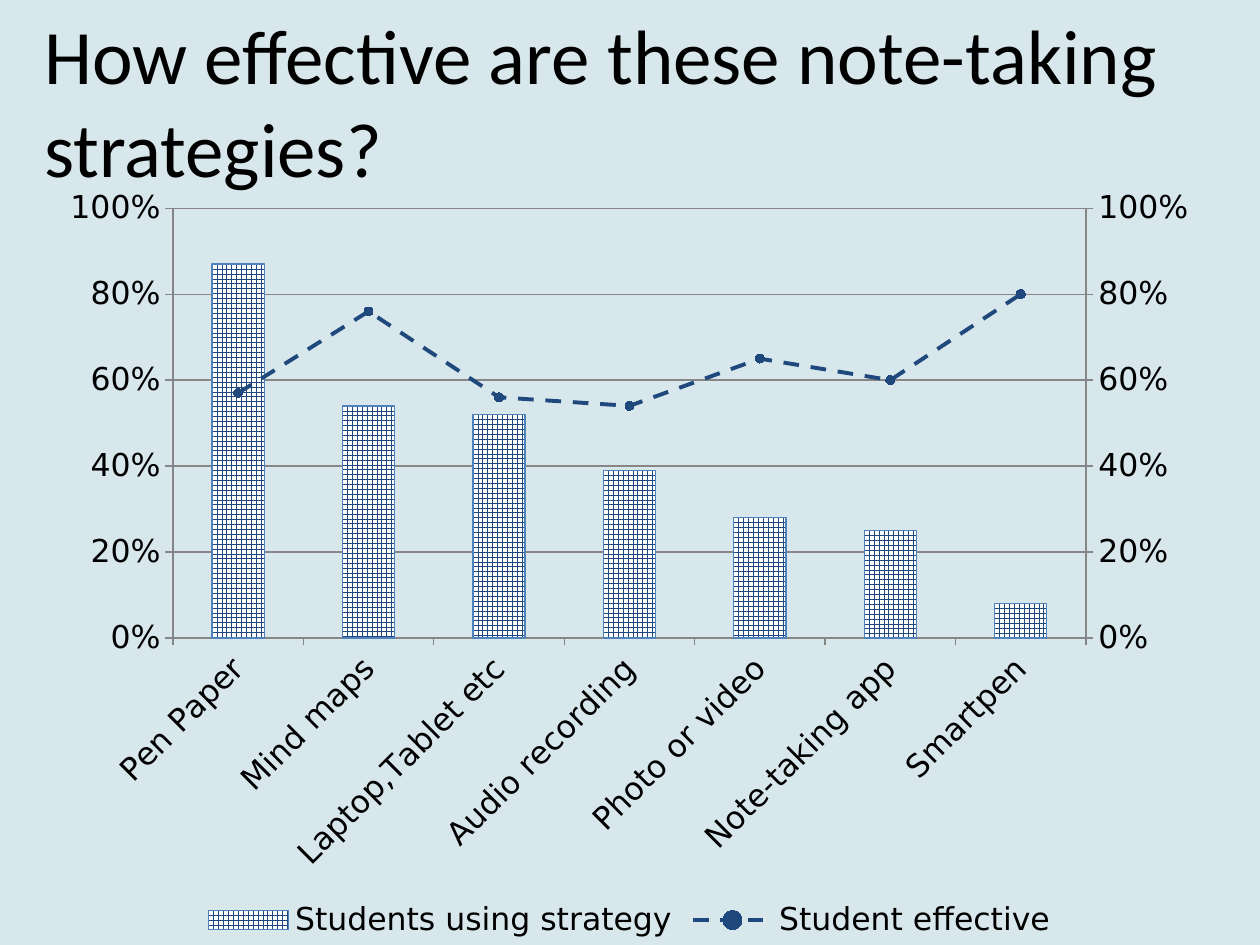
from copy import deepcopy
from pptx import Presentation
from pptx.chart.data import CategoryChartData as ChartData
from pptx.dml.color import RGBColor
from pptx.enum.chart import XL_CHART_TYPE as Kind, XL_LEGEND_POSITION as Side
from pptx.enum.chart import XL_MARKER_STYLE as Mark, XL_TICK_MARK as Tick
from pptx.enum.dml import MSO_LINE as Dash, MSO_PATTERN as Pattern
from pptx.enum.text import MSO_ANCHOR as Anchor, MSO_AUTO_SIZE as Fit, PP_ALIGN as Align
from pptx.oxml import parse_xml
from pptx.oxml.ns import nsdecls, qn
from pptx.util import Cm, Pt

PALE = RGBColor(0xD8, 0xE7, 0xEC)
NAVY = RGBColor(0x1F, 0x49, 0x7D)
BLUE = RGBColor(0x4F, 0x81, 0xBD)
GREY = RGBColor(0x86, 0x86, 0x86)
WHITE = RGBColor(255, 255, 255)
BLACK = RGBColor(0, 0, 0)

LABELS = ["Pen Paper", "Mind maps", "Laptop,Tablet etc", "Audio recording",
          "Photo or video", "Note-taking app", "Smartpen"]
USAGE = [0.87, 0.54, 0.52, 0.39, 0.28, 0.25, 0.08]
EFFECT = [0.57, 0.76, 0.56, 0.54, 0.65, 0.6, 0.8]


def apply(target, **values):
    for name, value in values.items():
        setattr(target, name, value)


def style_font(font, face, size):
    apply(font, name=face, size=Pt(size), bold=False)
    font.color.rgb = BLACK


def style_line(line, color, width=0.75):
    line.color.rgb = color
    line.width = Pt(width)


def make(text):
    return parse_xml(text.replace(">", f" {nsdecls('c')}>", 1))


def set_title(slide):
    title = slide.shapes.title
    apply(title, left=Cm(0.89), top=Cm(0.03), width=Cm(23.95), height=Cm(1.8))
    frame = title.text_frame
    frame.text = "How effective are these note-taking strategies?"
    apply(frame, word_wrap=True, auto_size=Fit.NONE, vertical_anchor=Anchor.TOP,
          margin_left=0, margin_right=Cm(0.25), margin_top=Cm(0.13), margin_bottom=Cm(0.13))
    para = frame.paragraphs[0]
    para.alignment = Align.LEFT
    style_font(para.runs[0].font, "Calibri", 44)


def style_axes(chart):
    value = chart.value_axis
    apply(value, minimum_scale=0, maximum_scale=1, major_unit=0.2,
          has_major_gridlines=True, major_tick_mark=Tick.OUTSIDE)
    apply(value.tick_labels, number_format="0%", number_format_is_linked=False)
    style_line(value.major_gridlines.format.line, GREY)
    label = chart.category_axis
    label.major_tick_mark = Tick.OUTSIDE
    style_font(label.tick_labels.font, "DejaVu Sans", 18)
    label._element.find(qn("c:txPr")).find(qn("a:bodyPr")).set("rot", "-2700000")
    for axis in (label, value):
        style_line(axis.format.line, GREY)


def add_right(chart):
    """Move the second series to a line plot on its own right axis."""
    bars = chart.plots[0]._element
    series = bars.findall(qn("c:ser"))[1]
    invert = series.find(qn("c:invertIfNegative"))
    if invert is not None:
        series.remove(invert)
    plot = make('<c:lineChart><c:grouping val="standard"/><c:varyColors val="0"/>'
                '<c:marker val="1"/><c:axId val="301"/><c:axId val="302"/></c:lineChart>')
    plot.insert(2, series)
    bars.addnext(plot)

    # Second pair of axes, with the category axis hidden
    label, value = chart.category_axis._element, chart.value_axis._element
    pair = deepcopy(label), deepcopy(value)
    for axis, own, cross in zip(pair, ("301", "302"), ("302", "301")):
        axis.find(qn("c:axId")).set("val", own)
        axis.find(qn("c:crossAx")).set("val", cross)
    pair[0].find(qn("c:delete")).set("val", "1")
    pair[1].find(qn("c:axPos")).set("val", "r")
    pair[1].find(qn("c:crosses")).set("val", "max")
    value.addnext(pair[0])
    pair[0].addnext(pair[1])
    chart.value_axis.has_major_gridlines = False


def style_series(chart):
    bars, lines = chart.plots
    apply(bars, gap_width=150, vary_by_categories=False)
    usage, effect = bars.series[0], lines.series[0]
    fill = usage.format.fill
    fill.patterned()
    fill.pattern = Pattern.LARGE_GRID
    fill.fore_color.rgb, fill.back_color.rgb = NAVY, WHITE
    style_line(usage.format.line, BLUE)

    effect.smooth = False
    style_line(effect.format.line, NAVY, 2.25)
    effect.format.line.dash_style = Dash.DASH
    apply(effect.marker, style=Mark.CIRCLE, size=5)
    look = effect.marker.format
    look.fill.solid()
    look.fill.fore_color.rgb = NAVY
    look.line.fill.background()


def set_plot(chart, **place):
    """Fix the inner plot area as shares of the chart frame."""
    parts = "".join(f'<c:{key} val="{share}"/>' for key, share in place.items())
    layout = make('<c:layout><c:manualLayout><c:layoutTarget val="inner"/>'
                  '<c:xMode val="edge"/><c:yMode val="edge"/>'
                  f'{parts}</c:manualLayout></c:layout>')
    area = chart.plots[0]._element.getparent()
    old = area.find(qn("c:layout"))
    if old is not None:
        area.remove(old)
    area.insert(0, layout)


def add_graph(slide):
    data = ChartData(number_format="0%")
    data.categories = LABELS
    data.add_series("Students using strategy", USAGE)
    data.add_series("Student effective", EFFECT)
    frame = slide.shapes.add_chart(Kind.COLUMN_CLUSTERED, Cm(0.89), Cm(3.58),
                                   Cm(23.6), Cm(15.47), data)
    chart = frame.chart
    apply(chart, has_title=False, has_legend=True)
    style_font(chart.font, "DejaVu Sans", 18)
    apply(chart.legend, position=Side.BOTTOM, include_in_layout=False)
    style_axes(chart)
    add_right(chart)
    style_series(chart)
    set_plot(chart, x=0.11, y=0.04, w=0.78, h=0.56)
    # Keep the chart behind the title
    slide.shapes.title._element.addprevious(frame._element)


def main():
    deck = Presentation()
    apply(deck, slide_width=Cm(25.4), slide_height=Cm(19.05))
    slide = deck.slides.add_slide(deck.slide_layouts[5])
    ground = slide.background.fill
    ground.solid()
    ground.fore_color.rgb = PALE
    set_title(slide)
    add_graph(slide)
    deck.save("out.pptx")


if __name__ == "__main__":
    main()
